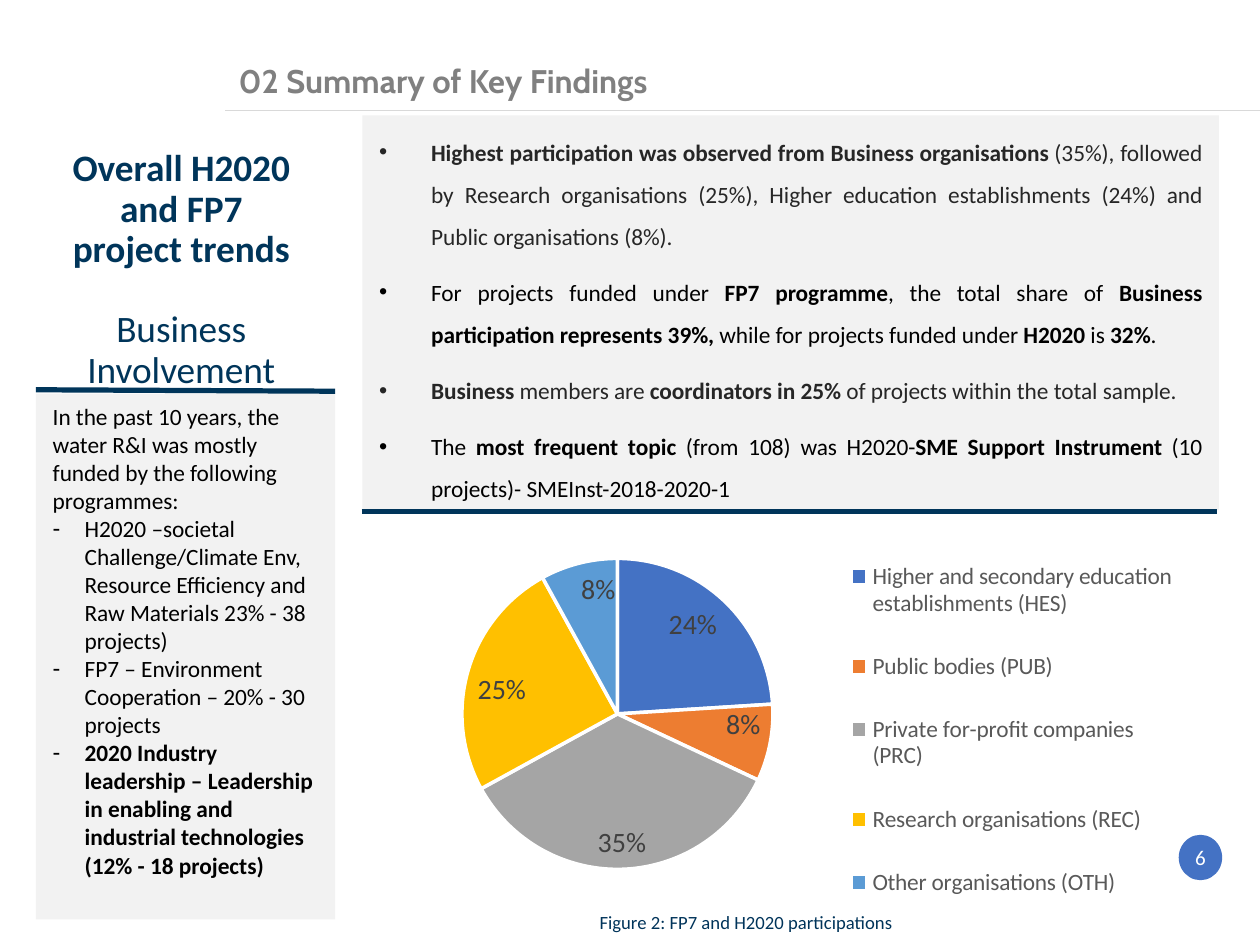
from lxml import etree
from pptx import Presentation
from pptx.chart.data import CategoryChartData
from pptx.dml.color import RGBColor
from pptx.enum.chart import XL_CHART_TYPE, XL_LABEL_POSITION, XL_LEGEND_POSITION
from pptx.enum.shapes import MSO_CONNECTOR, MSO_SHAPE
from pptx.enum.text import MSO_ANCHOR, MSO_AUTO_SIZE, PP_ALIGN
from pptx.oxml import parse_xml
from pptx.oxml.ns import nsdecls, qn
from pptx.util import Inches, Pt

PIE = XL_CHART_TYPE.PIE
IN_END = XL_LABEL_POSITION.INSIDE_END
BOTTOM = XL_LEGEND_POSITION.BOTTOM
LINE, OVAL = MSO_CONNECTOR.STRAIGHT, MSO_SHAPE.OVAL
TOP, MIDDLE = MSO_ANCHOR.TOP, MSO_ANCHOR.MIDDLE
FIXED = MSO_AUTO_SIZE.NONE
LEFT, CENTER, JUSTIFY = PP_ALIGN.LEFT, PP_ALIGN.CENTER, PP_ALIGN.JUSTIFY

NAVY, PALE, BLUE, WHITE = "00355A", "F2F2F2", "4472C4", "FFFFFF"
BLACK, DARK = "000000", "262626"

# Text between bars is bold
FINDINGS = [
    ("|Highest participation was observed from Business organisations| (35%), "
     "followed by Research organisations (25%), Higher education establishments "
     "(24%) and Public organisations (8%).", DARK),
    ("For projects funded under |FP7 programme|, the total share of "
     "|Business participation represents 39%, |while for projects funded under "
     "|H2020| is |32%|.", BLACK),
    ("|Business| members are |coordinators in 25% |of projects within the total "
     "sample.", DARK),
    ("The |most frequent topic |(from 108) was H2020-|SME Support Instrument| "
     "(10 projects)- SMEInst-2018-2020-1", BLACK),
]
INTRO = ("In the past 10 years, the water R&I was mostly funded by the "
         "following programmes:")
FUNDS = [
    "H2020 –societal Challenge/Climate Env, Resource Efficiency and Raw "
    "Materials 23% - 38 projects)",
    "FP7 – Environment Cooperation – 20% - 30 projects",
    "|2020 Industry leadership – Leadership in enabling and industrial "
    "technologies (12% - 18 projects)|",
]
SHARES = [
    ("Higher and secondary education establishments (HES)", 24, BLUE),
    ("Public bodies (PUB)", 8, "ED7D31"),
    ("Private for-profit companies (PRC)", 35, "A5A5A5"),
    ("Research organisations (REC)", 25, "FFC000"),
    ("Other organisations (OTH)", 8, "5B9BD5"),
]


def color(hex6):
    return RGBColor.from_string(hex6)


def place(part, x, y, w, h, inner=False):
    """Give a chart part a fixed place, in shares of the chart."""
    for old in part.findall(qn("c:layout")):
        part.remove(old)
    target = '<c:layoutTarget val="inner"/>' if inner else ""
    layout = parse_xml(
        f'<c:layout {nsdecls("c")}><c:manualLayout>{target}'
        '<c:xMode val="edge"/><c:yMode val="edge"/>'
        f'<c:x val="{x}"/><c:y val="{y}"/><c:w val="{w}"/><c:h val="{h}"/>'
        '</c:manualLayout></c:layout>')
    part.insert(0 if inner else 1, layout)


class Page:
    """One slide on a grid of 100 columns by 100 rows."""

    def __init__(self, deck, layout, face="Calibri"):
        self.col, self.row = deck.slide_width / 100, deck.slide_height / 100
        self.slide = deck.slides.add_slide(deck.slide_layouts[layout])
        self.shapes = self.slide.shapes
        self.face = face

    def box(self, x, y, w, h):
        return (int(x * self.col), int(y * self.row),
                int(w * self.col), int(h * self.row))

    def font(self, font, size, hex6, bold=False, face=None):
        font.name, font.size, font.bold = face or self.face, Pt(size), bold
        font.color.rgb = color(hex6)

    def para(self, frame, text, size, hex6, align=LEFT, face=None, mark=None,
             indent=0, lead=1.0, before=0, after=0):
        first = not frame.paragraphs[0].runs
        par = frame.paragraphs[0] if first else frame.add_paragraph()
        par.alignment, par.line_spacing = align, lead
        par.space_before, par.space_after = Pt(before), Pt(after)
        props = par._p.get_or_add_pPr()
        props.set("marL", str(Inches(indent)))
        props.set("indent", str(-Inches(indent)))
        if mark:
            etree.SubElement(props, qn("a:buChar")).set("char", mark)
        else:
            etree.SubElement(props, qn("a:buNone"))
        for i, part in enumerate(text.split("|")):
            if part:
                run = par.add_run()
                run.text = part
                self.font(run.font, size, hex6, i % 2 == 1, face)

    def frame(self, shape, anchor=TOP):
        frame = shape.text_frame
        frame.word_wrap, frame.auto_size = True, FIXED
        frame.vertical_anchor = anchor
        return frame

    def holder(self, index, area, fill=None, anchor=TOP):
        shape = self.slide.placeholders[index]
        shape.left, shape.top, shape.width, shape.height = self.box(*area)
        if fill:
            shape.fill.solid()
            shape.fill.fore_color.rgb = color(fill)
        return self.frame(shape, anchor)

    def label(self, area):
        return self.frame(self.shapes.add_textbox(*self.box(*area)))

    def rule(self, x1, y1, x2, y2, hex6, width):
        line = self.shapes.add_connector(LINE, *self.box(x1, y1, x2, y2))
        line.line.color.rgb, line.line.width = color(hex6), Pt(width)
        etree.SubElement(line._element.spPr, qn("a:effectLst"))

    def badge(self, area, text):
        dot = self.shapes.add_shape(OVAL, *self.box(*area))
        dot.shadow.inherit = False
        dot.fill.solid()
        dot.fill.fore_color.rgb = color(BLUE)
        dot.line.fill.background()
        frame = self.frame(dot, MIDDLE)
        frame.margin_left = frame.margin_right = 0
        frame.margin_top = frame.margin_bottom = 0
        self.para(frame, text, 9, WHITE, CENTER)

    def pie(self, area, rows):
        data = CategoryChartData()
        data.categories = [name for name, _, _ in rows]
        data.add_series("Series 1", [value for _, value, _ in rows])
        chart = self.shapes.add_chart(PIE, *self.box(*area), data).chart
        chart.has_title = False
        self.font(chart.font, 10, BLACK)
        # Clear background
        body = chart._chartSpace.find(qn("c:chart"))
        body.addnext(parse_xml(
            f'<c:spPr {nsdecls("c", "a")}><a:noFill/><a:ln><a:noFill/></a:ln></c:spPr>'))
        # Slices
        plot = chart.plots[0]
        plot.vary_by_categories = True
        for i, (_, _, hex6) in enumerate(rows):
            look = plot.series[0].points[i].format
            look.fill.solid()
            look.fill.fore_color.rgb = color(hex6)
            look.line.color.rgb, look.line.width = color(WHITE), Pt(1.5)
        # Labels
        plot.has_data_labels = True
        tags = plot.data_labels
        tags.show_percentage, tags.show_value = True, False
        tags.number_format, tags.number_format_is_linked = "0%", False
        tags.position = IN_END
        self.font(tags.font, 12, "404040")
        # Legend and plot area
        chart.has_legend = True
        key = chart.legend
        key.position, key.include_in_layout = BOTTOM, False
        self.font(key.font, 10, "595959")
        place(key._element, 0.59, 0.08, 0.4, 0.9)
        place(body.find(qn("c:plotArea")), 0.08, 0.15, 0.46, 0.69, inner=True)


def main():
    deck = Presentation()
    deck.slide_width = Inches(7.5)
    deck.slide_height = deck.slide_width * 3 // 4
    page = Page(deck, 3)

    # Title
    title = page.holder(0, (17.6, 6.1, 46.9, 5.35), anchor=MIDDLE)
    page.para(title, "|02 Summary of Key Findings|", 14, "808080",
              face="Cabin", lead=0.9)
    page.rule(17.9, 11.7, 100, 11.7, "D9D9D9", 0.5)

    # Findings
    panel = page.holder(1, (28.75, 12.2, 68, 41.8), PALE)
    for text, hex6 in FINDINGS:
        page.para(panel, text, 10, hex6, JUSTIFY, mark="•", indent=0.31,
                  lead=1.5, after=6)

    # Programmes
    side = page.holder(2, (2.85, 41.65, 23.75, 55.65), PALE)
    page.para(side, INTRO, 10, BLACK)
    for text in FUNDS:
        page.para(side, text, 10, BLACK, mark="-", indent=0.19)

    # Side heading
    head = page.label((2.8, 14.95, 23.2, 26.7))
    for text, gap in [("|Overall H2020 and FP7|", 0), ("|project trends|", 0),
                      ("Business", 17.3), ("Involvement", 0)]:
        page.para(head, text, 16, NAVY, CENTER, lead=0.9, before=gap)

    # Participation chart
    page.pie((28.8, 51.95, 65.2, 47.7), SHARES)
    caption = page.label((35.7, 95.5, 47.05, 4.25))
    page.para(caption, "Figure 2: FP7 and H2020 participations", 8, "00345A", CENTER)

    # Rules and page number
    page.rule(2.85, 41.25, 26.6, 41.4, NAVY, 2.25)
    page.rule(28.7, 54.1, 96.6, 54.1, NAVY, 2.25)
    page.badge((93.55, 88.35, 3.45, 4.8), "6")

    deck.save("out.pptx")


if __name__ == "__main__":
    main()
